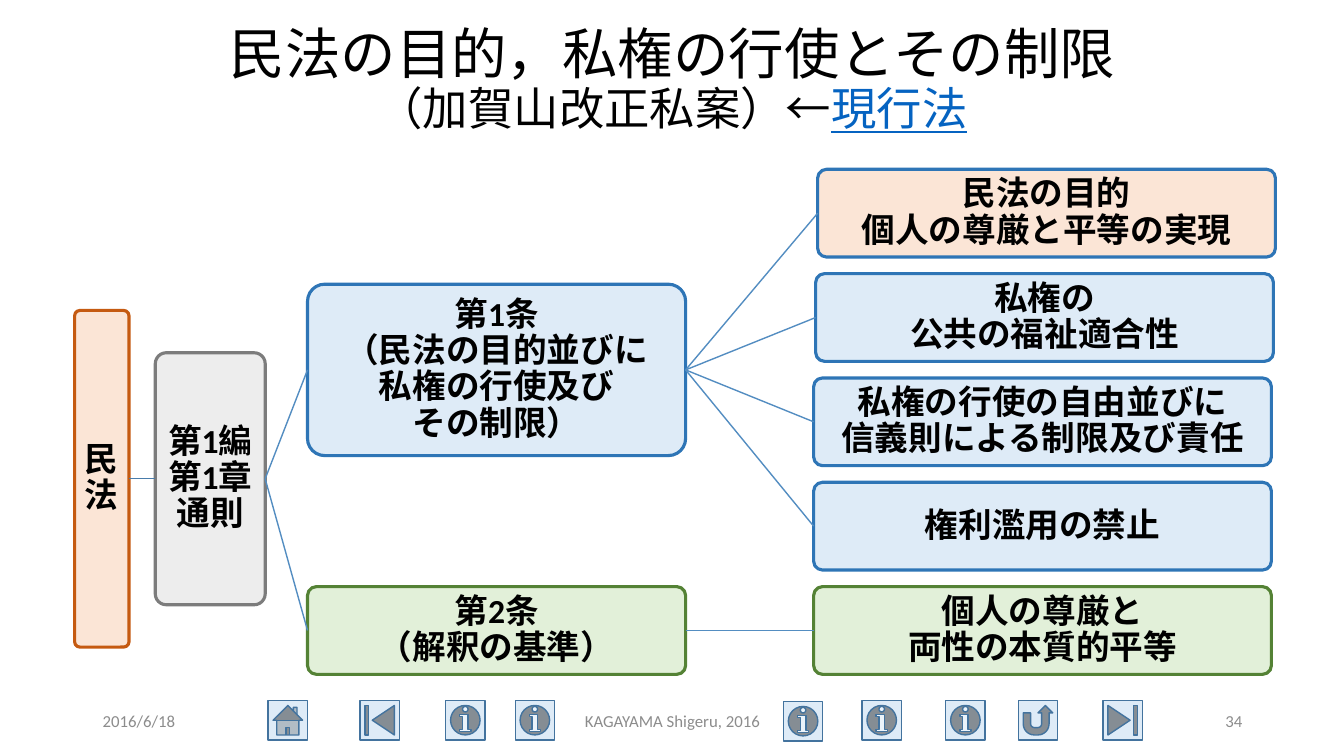
from pptx import Presentation
from pptx.dml.color import RGBColor
from pptx.enum.shapes import MSO_CONNECTOR, MSO_SHAPE
from pptx.enum.text import MSO_ANCHOR, PP_ALIGN
from pptx.oxml.ns import qn
from pptx.util import Inches, Pt
from lxml import etree

ROUNDED = MSO_SHAPE.ROUNDED_RECTANGLE
HOME = MSO_SHAPE.ACTION_BUTTON_HOME
BEGINNING = MSO_SHAPE.ACTION_BUTTON_BEGINNING
INFORMATION = MSO_SHAPE.ACTION_BUTTON_INFORMATION
RETURN = MSO_SHAPE.ACTION_BUTTON_RETURN
END = MSO_SHAPE.ACTION_BUTTON_END
STRAIGHT = MSO_CONNECTOR.STRAIGHT
MIDDLE = MSO_ANCHOR.MIDDLE
LEFT, CENTER, RIGHT = PP_ALIGN.LEFT, PP_ALIGN.CENTER, PP_ALIGN.RIGHT
LEFT_SIDE, RIGHT_SIDE = 1, 3

THEME = {
    "font": "Calibri",
    "title": Pt(39.6), "subtitle": Pt(32.4), "node": Pt(24), "footer": Pt(12),
    "black": RGBColor.from_string("000000"),
    "gray": RGBColor.from_string("8C8C8C"),
    "link": RGBColor.from_string("0563C1"),
    "button_line": RGBColor.from_string("43739E"),
    "trunk": RGBColor.from_string("497CAB"),
    "branch": RGBColor.from_string("538DC1"),
    "orange": RGBColor.from_string("FBE5D6"),
    "orange_line": RGBColor.from_string("C55A11"),
    "silver": RGBColor.from_string("EDEDED"),
    "silver_line": RGBColor.from_string("7C7C7C"),
    "blue": RGBColor.from_string("DEEBF7"),
    "blue_line": RGBColor.from_string("2E75B6"),
    "green": RGBColor.from_string("E2F0D9"),
    "green_line": RGBColor.from_string("548235"),
}

presentation = Presentation()
presentation.slide_width = Inches(13.33)
presentation.slide_height = Inches(7.5)
slide = presentation.slides.add_slide(presentation.slide_layouts[6])


def add_box(preset, left, top, width, height, fill, line, line_width):
    shape = slide.shapes.add_shape(
        preset, Inches(left), Inches(top), Inches(width), Inches(height))
    shape.shadow.inherit = False
    shape.fill.solid()
    shape.fill.fore_color.rgb = THEME[fill]
    shape.line.color.rgb = THEME[line]
    shape.line.width = Pt(line_width)
    return shape


def style_text(shape, size, color, alignment):
    frame = shape.text_frame
    frame.word_wrap = True
    frame.vertical_anchor = MIDDLE
    paragraph = frame.paragraphs[0]
    paragraph.alignment = alignment
    paragraph.font.name = THEME["font"]
    paragraph.font.size = THEME[size]
    paragraph.font.color.rgb = THEME[color]
    return paragraph


buttons = [
    (HOME, 2.66, 6.95), (BEGINNING, 3.57, 6.95), (INFORMATION, 4.42, 6.95),
    (INFORMATION, 5.11, 6.95), (INFORMATION, 7.77, 6.96),
    (INFORMATION, 8.55, 6.95), (INFORMATION, 9.38, 6.95),
    (RETURN, 10.1, 6.95), (END, 10.94, 6.95),
]
for preset, left, top in buttons:
    add_box(preset, left, top, 0.39, 0.39, "blue", "button_line", 1)

title = slide.shapes.add_textbox(Inches(0.92), Inches(0.22), Inches(11.5), Inches(1.16))
title_paragraph = style_text(title, "title", "black", CENTER)
title_paragraph.line_spacing = 0.9
title_runs = [
    ("民法の目的，私権の行使とその制限", "title", "black"),
    ("（加賀山改正私案）←", "subtitle", "black"),
    ("現行法", "subtitle", "link"),
]
for index, (text, size, color) in enumerate(title_runs):
    if index == 1:
        title_paragraph.add_line_break()
    run = title_paragraph.add_run()
    run.text = text
    run.font.size = THEME[size]
    run.font.color.rgb = THEME[color]
    if color == "link":
        run.font.underline = True

footers = [
    ("2016/6/18", 0.92, 3, LEFT),
    ("KAGAYAMA Shigeru, 2016", 4.42, 4.5, CENTER),
    ("34", 9.42, 3, RIGHT),
]
for text, left, width, alignment in footers:
    footer = slide.shapes.add_textbox(Inches(left), Inches(6.95), Inches(width), Inches(0.4))
    style_text(footer, "footer", "gray", alignment).text = text

nodes = [
    ("code", "民\v法", 0.74, 3.08, 0.54, 3.34, "orange", "orange_line"),
    ("chapter", "第1編\v第1章\v通則", 1.54, 3.5, 1.09, 2.5, "silver", "silver_line"),
    ("article 1", "第1条\v（民法の目的並びに\v私権の行使及び\vその制限）",
     3.05, 2.82, 3.75, 1.7, "blue", "blue_line"),
    ("article 2", "第2条\v（解釈の基準）", 3.05, 5.82, 3.75, 0.87, "green", "green_line"),
]
leaves = [
    ("purpose", "民法の目的\v個人の尊厳と平等の実現", 8.11, "orange", "blue_line"),
    ("welfare", "私権の\v公共の福祉適合性", 8.09, "blue", "blue_line"),
    ("good faith", "私権の行使の自由並びに\v信義則による制限及び責任", 8.07, "blue", "blue_line"),
    ("abuse", "権利濫用の禁止", 8.07, "blue", "blue_line"),
    ("equality", "個人の尊厳と\v両性の本質的平等", 8.07, "green", "green_line"),
]
for row, (name, text, left, fill, line) in enumerate(leaves):
    nodes.append((name, text, left, 1.68 + 1.035 * row, 4.54, 0.87, fill, line))

boxes = {}
for name, text, left, top, width, height, fill, line in nodes:
    box = add_box(ROUNDED, left, top, width, height, fill, line, 2.25)
    box.adjustments[0] = 0.1
    frame = box.text_frame
    frame.margin_left = frame.margin_right = Inches(0.03)
    frame.margin_top = frame.margin_bottom = Inches(0.03)
    paragraph = style_text(box, "node", "black", CENTER)
    paragraph.text = text
    paragraph.font.bold = True
    paragraph.line_spacing = 0.9
    boxes[name] = box

links = [
    ("code", "chapter", "trunk"),
    ("chapter", "article 1", "branch"),
    ("chapter", "article 2", "branch"),
    ("article 1", "purpose", "branch"),
    ("article 1", "welfare", "branch"),
    ("article 1", "good faith", "branch"),
    ("article 1", "abuse", "branch"),
    ("article 2", "equality", "branch"),
]
for parent, child, color in links:
    connector = slide.shapes.add_connector(STRAIGHT, 0, 0, 0, 0)
    connector.begin_connect(boxes[parent], RIGHT_SIDE)
    connector.end_connect(boxes[child], LEFT_SIDE)
    connector.line.color.rgb = THEME[color]
    connector.line.width = Pt(1)
    etree.SubElement(connector._element.spPr, qn("a:effectLst"))

presentation.save("out.pptx")
